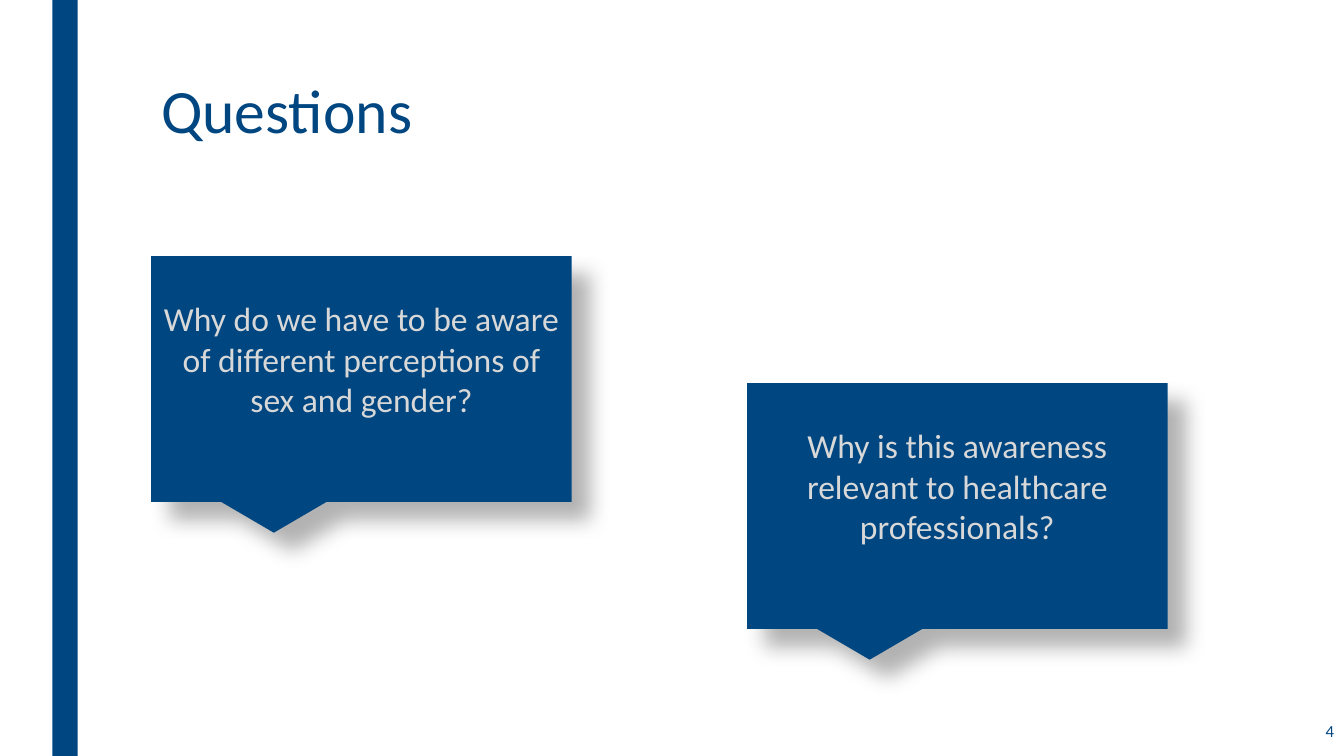
from lxml import etree
from pptx import Presentation, util as u
from pptx.dml.color import RGBColor
from pptx.enum import shapes, text
from pptx.oxml.ns import qn

HUES = {"navy": "004680", "pale": "D8D8D8", "shade": "000000"}
LEFT, TOP = 1.5, 2.54
WIDE, HIGH = 4.17, 2.44
STEP_X, STEP_Y = 5.91, 1.26
ASKS = [
    "Why do we have to be aware of different perceptions of sex and gender?",
    "Why is this awareness relevant to healthcare professionals?",
]

deck = Presentation()
deck.slide_width, deck.slide_height = u.Inches(13.33), u.Inches(7.5)
slide = deck.slides.add_slide(deck.slide_layouts[6])


def write(shape, words, size, hue, align, anchor):
    frame = shape.text_frame
    frame.word_wrap = True
    frame.vertical_anchor = anchor
    par = frame.paragraphs[0]
    par.text = words
    par.alignment = align
    par.font.name = "Calibri"
    par.font.size = u.Pt(size)
    par.font.color.rgb = RGBColor.from_string(HUES[hue])
    return par


def block(kind, *box):
    """Add a flat navy shape; box is left, top, width, height in inches."""
    shape = slide.shapes.add_shape(kind, *map(u.Inches, box))
    shape.shadow.inherit = False
    shape.fill.solid()
    shape.fill.fore_color.rgb = RGBColor.from_string(HUES["navy"])
    shape.line.fill.background()
    return shape


block(shapes.MSO_SHAPE.RECTANGLE, 0.52, 0, 0.25, 7.5)

title = slide.shapes.add_textbox(*map(u.Inches, (LEFT, 0.75, 10.5, 1.62)))
head = write(title, "Questions", 44, "navy",
             text.PP_ALIGN.LEFT, text.MSO_ANCHOR.TOP)
head.line_spacing = 0.89

page = slide.shapes.add_textbox(*map(u.Inches, (11.58, 7.03, 1.75, 0.44)))
write(page, "4", 12, "navy", text.PP_ALIGN.RIGHT, text.MSO_ANCHOR.MIDDLE)

for i, ask in enumerate(ASKS):
    call = block(shapes.MSO_SHAPE.RECTANGULAR_CALLOUT,
                 LEFT + i * STEP_X, TOP + i * STEP_Y, WIDE, HIGH)
    write(call, ask, 24, "pale", text.PP_ALIGN.CENTER, text.MSO_ANCHOR.MIDDLE)
    call.text_frame.margin_bottom = u.Inches(0.45)

    # Soft shadow, down and to the right
    glow = call._element.spPr.find(qn("a:effectLst"))
    cast = etree.SubElement(glow, qn("a:outerShdw"), blurRad=str(u.Pt(15)),
                            dist=str(u.Pt(18)), dir=str(45 * 60000),
                            algn="tl", rotWithShape="0")
    tint = etree.SubElement(cast, qn("a:srgbClr"), val=HUES["shade"])
    etree.SubElement(tint, qn("a:alpha"), val="30000")

deck.save("out.pptx")
